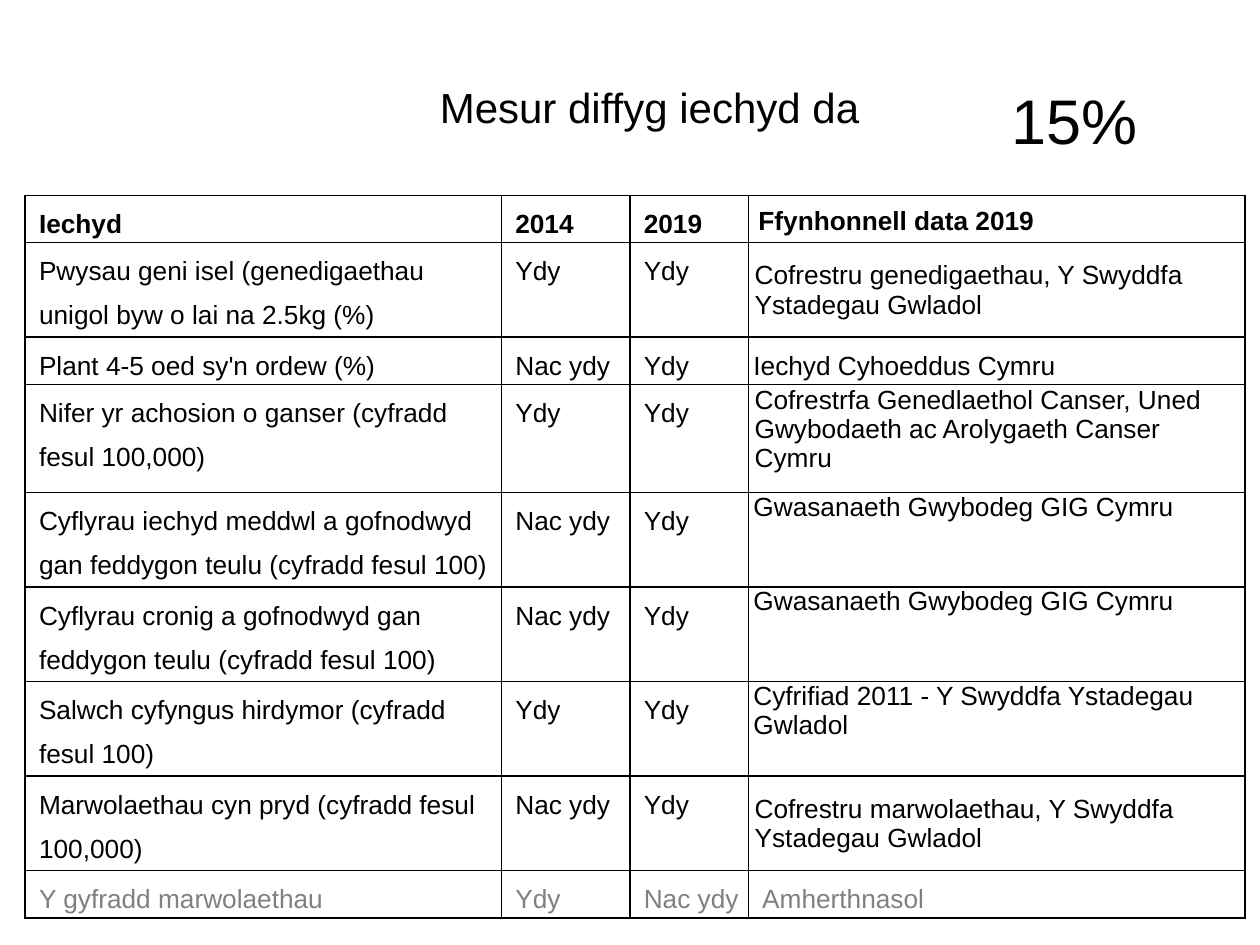
from lxml import etree
from pptx import Presentation
from pptx.dml.color import RGBColor
from pptx.enum.text import MSO_ANCHOR, PP_ALIGN
from pptx.oxml.ns import qn
from pptx.util import Inches, Pt

TOP, MIDDLE = MSO_ANCHOR.TOP, MSO_ANCHOR.MIDDLE
LEFT, CENTER = PP_ALIGN.LEFT, PP_ALIGN.CENTER
FONT, BLACK, GREY = "Arial", "000000", "808080"

WIDTHS = [3.78, 1.02, 0.94, 3.94]
HEIGHTS = [0.37, 0.75, 0.37, 0.86, 0.75, 0.75, 0.75, 0.75, 0.37]

# Cell layouts: insets (left, top, right, bottom), anchor, line spacing
WIDE = ((0.07, 0, 0.07, 0), TOP, 1.5)
HEAD = ((0.04, 0.04, 0, 0), MIDDLE, 1)
MID = ((0.01, 0.01, 0.01, 0), MIDDLE, 1)
HIGH = ((0.01, 0.01, 0.01, 0), TOP, 1)
FLUSH = ((0, 0, 0, 0), TOP, 1)
LOOSE = ((0, 0, 0, 0), TOP, 1.5)

# Three leading texts, the data source, and the layout of the source cell
ROWS = [
    ("Iechyd", "2014", "2019", "Ffynhonnell data 2019", HEAD),
    ("Pwysau geni isel (genedigaethau unigol byw o lai na 2.5kg (%)",
     "Ydy", "Ydy", "Cofrestru genedigaethau, Y Swyddfa Ystadegau Gwladol", MID),
    ("Plant 4-5 oed sy'n ordew (%)",
     "Nac ydy", "Ydy", "Iechyd Cyhoeddus Cymru", LOOSE),
    ("Nifer yr achosion o ganser (cyfradd fesul 100,000)", "Ydy", "Ydy",
     "Cofrestrfa Genedlaethol Canser, Uned Gwybodaeth ac Arolygaeth Canser Cymru",
     HIGH),
    ("Cyflyrau iechyd meddwl a gofnodwyd gan feddygon teulu (cyfradd fesul 100)",
     "Nac ydy", "Ydy", "Gwasanaeth Gwybodeg GIG Cymru", FLUSH),
    ("Cyflyrau cronig a gofnodwyd gan feddygon teulu (cyfradd fesul 100)",
     "Nac ydy", "Ydy", "Gwasanaeth Gwybodeg GIG Cymru", FLUSH),
    ("Salwch cyfyngus hirdymor (cyfradd fesul 100)",
     "Ydy", "Ydy", "Cyfrifiad 2011 - Y Swyddfa Ystadegau Gwladol", FLUSH),
    ("Marwolaethau cyn pryd (cyfradd fesul 100,000)",
     "Nac ydy", "Ydy", "Cofrestru marwolaethau, Y Swyddfa Ystadegau Gwladol", MID),
    ("Y gyfradd marwolaethau", "Ydy", "Nac ydy", "Amherthnasol", WIDE),
]


def color(code):
    return RGBColor.from_string(code)


def write(frame, text, size, code=BLACK, bold=False):
    frame.text = text
    par = frame.paragraphs[0]
    font = par.runs[0].font
    font.name, font.size, font.bold = FONT, Pt(size), bold
    font.color.rgb = color(code)
    return par


def add_label(slide, box, text, size, align=LEFT):
    label = slide.shapes.add_textbox(*map(Inches, box))
    label.text_frame.word_wrap = True
    write(label.text_frame, text, size).alignment = align


def add_borders(cell):
    props = cell._tc.get_or_add_tcPr()
    for spot, side in enumerate(("lnL", "lnR", "lnT", "lnB")):
        line = etree.Element(qn("a:" + side), w=str(Pt(1)))
        fill = etree.SubElement(line, qn("a:solidFill"))
        etree.SubElement(fill, qn("a:srgbClr"), val=BLACK)
        props.insert(spot, line)


def fill_cell(cell, text, layout, code, bold):
    insets, anchor, spacing = layout
    par = write(cell.text_frame, text, 15, code, bold)
    par.line_spacing = spacing
    props = par._p.get_or_add_pPr()
    props.set("marL", str(Inches(0.04)))
    props.set("indent", "0")
    (cell.margin_left, cell.margin_top,
     cell.margin_right, cell.margin_bottom) = map(Inches, insets)
    cell.vertical_anchor = anchor
    cell.fill.background()
    add_borders(cell)


def add_grid(slide, box):
    grid = slide.shapes.add_table(len(ROWS), len(WIDTHS), *map(Inches, box)).table
    grid.first_row = grid.horz_banding = False
    for col, width in zip(grid.columns, WIDTHS):
        col.width = Inches(width)
    for row, height in zip(grid.rows, HEIGHTS):
        row.height = Inches(height)
    last = len(ROWS) - 1
    for r, (*texts, layout) in enumerate(ROWS):
        layouts = [WIDE] * 3 + [layout]
        for c, text in enumerate(texts):
            fill_cell(grid.cell(r, c), text, layouts[c],
                      GREY if r == last else BLACK, r == 0)


def main():
    deck = Presentation()
    deck.slide_width, deck.slide_height = Inches(10), Inches(7.5)
    slide = deck.slides.add_slide(deck.slide_layouts[6])
    add_label(slide, (2.04, 0.6, 6.23, 0.5), "Mesur diffyg iechyd da", 24, CENTER)
    add_grid(slide, (0.2, 1.55, 9.69, 5.74))
    add_label(slide, (7.93, 0.6, 1.34, 0.71), "15%", 36)
    deck.save("out.pptx")


if __name__ == "__main__":
    main()
